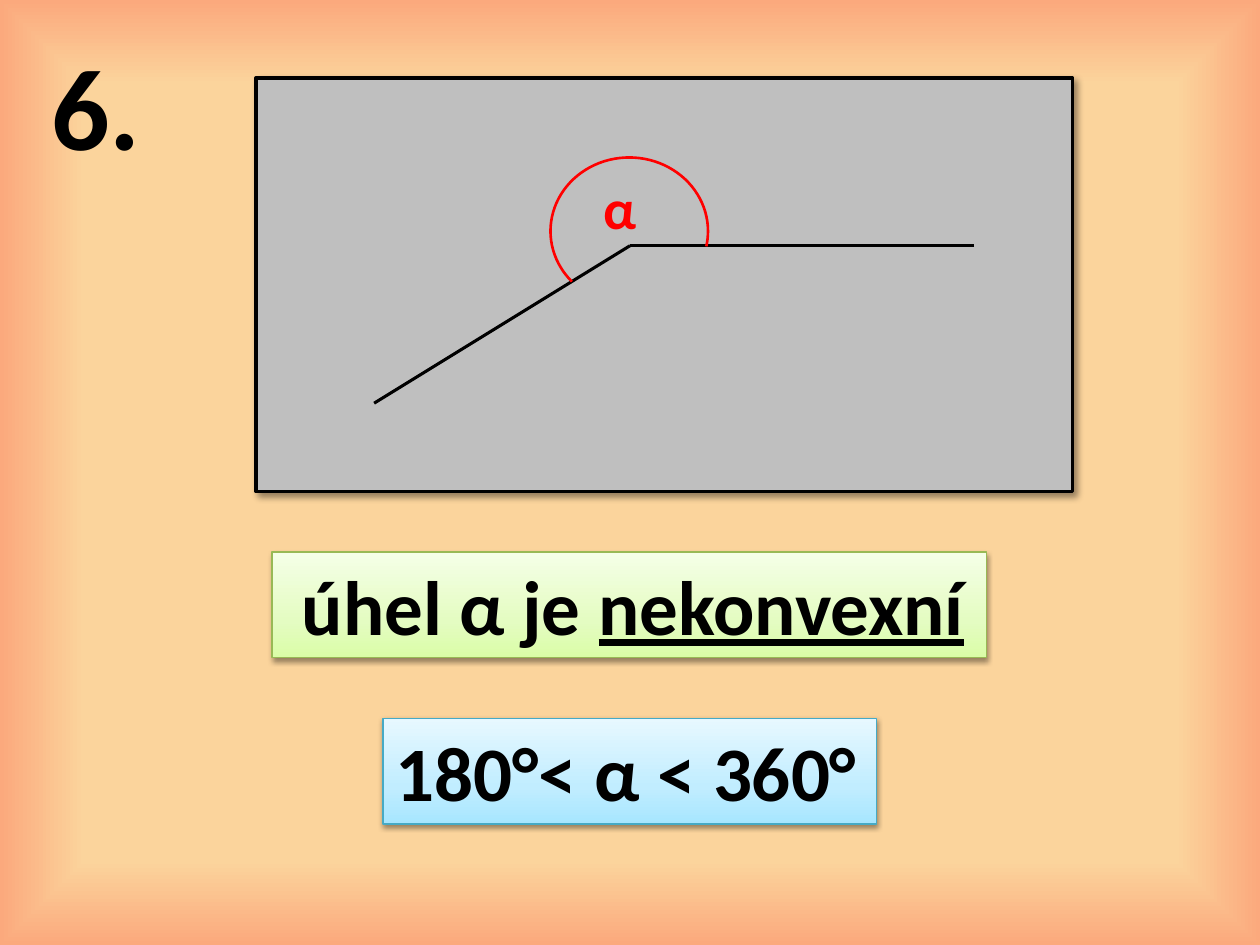
from typing import NamedTuple

from lxml import etree
from pptx import Presentation
from pptx.dml.color import RGBColor
from pptx.enum import shapes as sh, text as tx
from pptx.oxml import ns
from pptx.util import Pt

HEX = {
    "ink": "000000", "red": "FF0000", "gray": "BFBFBF",
    "sand": "FBD49C", "coral": "FBA97D", "blush": "FEE7F2",
    "green": "98B955", "lime": "DAFDA7", "mint": "E4FCC2", "pale": "F5FFE7",
    "teal": "46AAC5", "sky": "A7E6FF", "ice": "C1EDFF", "frost": "E7F8FF",
}


class Shade(NamedTuple):
    alpha: int
    blur: float
    dist: float
    angle: int


class Label(NamedTuple):
    box: tuple
    runs: list  # (text, underlined)
    stops: list  # (percent, colour, alpha)
    edge: str


SOFT = Shade(38, 3.1, 1.6, 90)
LABELS = [
    Label((155.5, 315.4, 408.2, 60.5), [(" úhel α je ", False), ("nekonvexní", True)],
          [(0, "lime", 100), (35, "mint", 100), (100, "pale", 100)], "green"),
    Label((218.9, 410.4, 282.2, 60.5), [("180°< α < 360°", False)],
          [(0, "sky", 100), (35, "ice", 100), (100, "frost", 100)], "teal"),
]
RAYS = [(213.8, 230.4), (556.6, 140.4)]
APEX = (360, 140.4)


def rgb(name: str) -> RGBColor:
    return RGBColor.from_string(HEX[name])


def node(top, tag: str, **attrs):
    return etree.SubElement(top, ns.qn(tag), {k: str(v) for k, v in attrs.items()})


def tint(top, name: str, alpha: int) -> None:
    item = node(top, "a:srgbClr", val=HEX[name])
    if alpha < 100:
        node(item, "a:alpha", val=alpha * 1000)


def blend(fill, root, stops: list, angle: int | None = None) -> None:
    """Fill with a linear gradient, or a rectangular one if no angle is given."""
    fill.gradient()
    grad = root.find(".//" + ns.qn("a:gradFill"))
    for old in list(grad):
        grad.remove(old)
    group = node(grad, "a:gsLst")
    for pos, name, alpha in stops:
        tint(node(group, "a:gs", pos=pos * 1000), name, alpha)
    if angle is None:
        shape = node(grad, "a:path", path="rect")
        node(shape, "a:fillToRect", l=50000, t=50000, r=50000, b=50000)
    else:
        node(grad, "a:lin", ang=angle * 60000, scaled=1)


def drop(shape, shade: Shade) -> None:
    group = shape._element.spPr.find(ns.qn("a:effectLst"))
    item = node(group, "a:outerShdw", blurRad=Pt(shade.blur), dist=Pt(shade.dist),
                dir=shade.angle * 60000, algn="ctr", rotWithShape=0)
    tint(item, "ink", shade.alpha)


def stroke(shape, name: str, width: float) -> None:
    shape.line.color.rgb = rgb(name)
    shape.line.width = Pt(width)


def form(slide, kind, box: tuple, edge: str, width: float):
    shape = slide.shapes.add_shape(kind, *map(Pt, box))
    shape.shadow.inherit = False
    stroke(shape, edge, width)
    return shape


def write(shape, runs: list, *, size: float, color: str = "ink") -> None:
    frame = shape.text_frame
    frame.word_wrap = False
    frame.auto_size = tx.MSO_AUTO_SIZE.SHAPE_TO_FIT_TEXT
    frame.vertical_anchor = tx.MSO_ANCHOR.TOP
    para = frame.paragraphs[0]
    para.alignment = tx.PP_ALIGN.LEFT
    for words, under in runs:
        run = para.add_run()
        run.text = words
        font = run.font
        font.name, font.size, font.bold = "Calibri", Pt(size), True
        font.color.rgb = rgb(color)
        if under:
            font.underline = True


def note(slide, box: tuple, words: str, **style) -> None:
    write(slide.shapes.add_textbox(*map(Pt, box)), [(words, False)], **style)


def ray(slide, end: tuple) -> None:
    line = slide.shapes.add_connector(sh.MSO_CONNECTOR.STRAIGHT, *map(Pt, end + APEX))
    stroke(line, "ink", 1.75)
    node(line._element.spPr, "a:effectLst")


def label(slide, item: Label) -> None:
    shape = form(slide, sh.MSO_SHAPE.RECTANGLE, item.box, item.edge, 0.75)
    blend(shape.fill, shape._element, item.stops, 270)
    drop(shape, SOFT)
    write(shape, item.runs, size=44)


def main() -> None:
    deck = Presentation()
    deck.slide_width, deck.slide_height = Pt(720), Pt(540)
    slide = deck.slides.add_slide(deck.slide_layouts[6])

    # Background
    blend(slide.background.fill, slide._element,
          [(82, "sand", 100), (100, "coral", 45), (100, "blush", 100)])

    # Drawing panel and task number
    panel = form(slide, sh.MSO_SHAPE.RECTANGLE, (146.2, 44.6, 466.6, 236.2), "ink", 2)
    panel.fill.solid()
    panel.fill.fore_color.rgb = rgb("gray")
    drop(panel, Shade(40, 4, 3, 45))
    note(slide, (22.3, 16.6, 66.2, 87.1), "6.", size=66)

    # Angle: two rays, name and arc
    for end in RAYS:
        ray(slide, end)
    note(slide, (337.7, 95.8, 35.3, 46.1), "α", size=32, color="red")
    arc = form(slide, sh.MSO_SHAPE.ARC, (314.6, 90, 90, 84.2), "red", 1.5)
    arc.fill.background()
    arc.adjustments[0], arc.adjustments[1] = 83.17, 6.73

    # Answers
    for item in LABELS:
        label(slide, item)

    deck.save("out.pptx")


if __name__ == "__main__":
    main()
